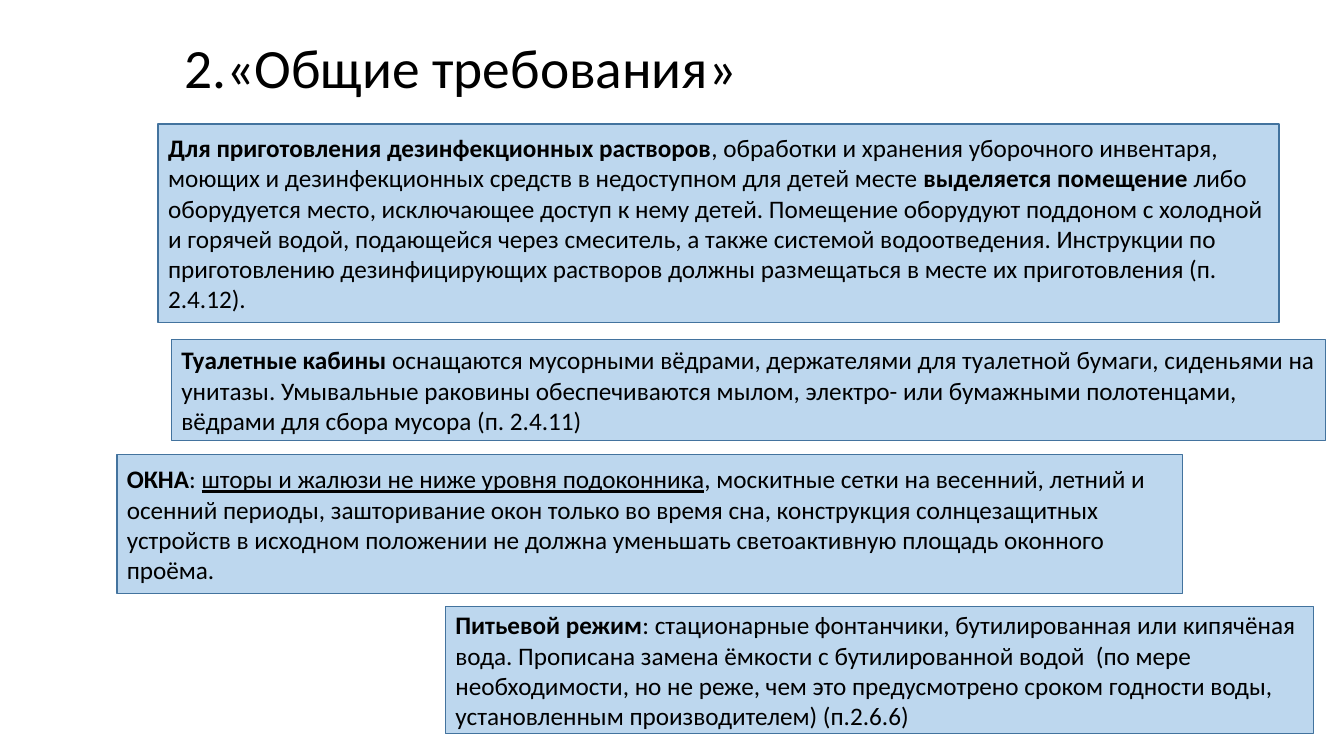
from typing import NamedTuple

from pptx import Presentation
from pptx.dml.color import RGBColor
from pptx.enum.shapes import MSO_SHAPE
from pptx.enum.text import MSO_ANCHOR, PP_ALIGN
from pptx.util import Pt

BLACK = RGBColor(0x00, 0x00, 0x00)
LIGHT_BLUE = RGBColor(0xBD, 0xD7, 0xEE)
DARK_BLUE = RGBColor(0x43, 0x73, 0x9E)
FONT = "Calibri"


class Span(NamedTuple):
    text: str
    bold: bool = False
    underline: bool = False


class Rule(NamedTuple):
    left: float
    top: float
    width: float
    height: float
    spans: list[Span]


RULES = [
    Rule(113, 88.6, 800.6, 141.8, [
        Span("Для приготовления дезинфекционных растворов", bold=True),
        Span(", обработки и хранения уборочного инвентаря, моющих и "
             "дезинфекционных средств в недоступном для детей месте "),
        Span("выделяется помещение ", bold=True),
        Span("либо оборудуется место, исключающее доступ к нему детей. "
             "Помещение оборудуют поддоном с холодной и горячей водой, "
             "подающейся через смеситель, а также системой водоотведения. "
             "Инструкции по приготовлению дезинфицирующих растворов должны "
             "размещаться в месте их приготовления (п. 2.4.12)."),
    ]),
    Rule(122.4, 242.6, 824.4, 72, [
        Span("Туалетные кабины", bold=True),
        Span(" оснащаются мусорными вёдрами, держателями для туалетной "
             "бумаги, сиденьями на унитазы. Умывальные раковины "
             "обеспечиваются мылом, электро- или бумажными полотенцами, "
             "вёдрами для сбора мусора (п. 2.4.11)"),
    ]),
    Rule(83.5, 324.7, 761, 99.4, [
        Span("ОКНА", bold=True),
        Span(": "),
        Span("шторы и жалюзи не ниже уровня подоконника", underline=True),
        Span(", москитные сетки на весенний, летний и осенний периоды, "
             "зашторивание окон только во время сна, конструкция "
             "солнцезащитных устройств в исходном положении не должна "
             "уменьшать светоактивную площадь оконного проёма."),
    ]),
    Rule(318.2, 433.4, 619.9, 90.7, [
        Span("Питьевой режим", bold=True),
        Span(": стационарные фонтанчики, бутилированная или кипячёная вода. "
             "Прописана замена ёмкости с бутилированной водой  (по мере "
             "необходимости, но не реже, чем это предусмотрено сроком "
             "годности воды, установленным производителем) (п.2.6.6)"),
    ]),
]


def write(tf, spans: list[Span], *, size: float, line_spacing: float = 1.0) -> None:
    """Fill a text frame with one left-aligned paragraph."""
    tf.word_wrap = True
    tf.vertical_anchor = MSO_ANCHOR.MIDDLE
    p = tf.paragraphs[0]
    p.alignment = PP_ALIGN.LEFT
    p.line_spacing = line_spacing
    for span in spans:
        r = p.add_run()
        r.text = span.text
        r.font.name = FONT
        r.font.size = Pt(size)
        r.font.bold = span.bold
        r.font.underline = span.underline
        r.font.color.rgb = BLACK


def draw_rule(s, rule: Rule) -> None:
    sp = s.shapes.add_shape(MSO_SHAPE.RECTANGLE, Pt(rule.left), Pt(rule.top),
                            Pt(rule.width), Pt(rule.height))
    sp.shadow.inherit = False
    sp.fill.solid()
    sp.fill.fore_color.rgb = LIGHT_BLUE
    sp.line.color.rgb = DARK_BLUE
    sp.line.width = Pt(1)
    write(sp.text_frame, rule.spans, size=18)


def main() -> None:
    prs = Presentation()
    prs.slide_width, prs.slide_height = Pt(960), Pt(540)
    s = prs.slides.add_slide(prs.slide_layouts[6])

    # Title
    title = s.shapes.add_textbox(Pt(124.6), Pt(23.8), Pt(789.1), Pt(52.6))
    write(title.text_frame, [Span("2.«Общие требования»")], size=39.6, line_spacing=0.9)

    # Requirement boxes
    for rule in RULES:
        draw_rule(s, rule)

    prs.save("out.pptx")


if __name__ == "__main__":
    main()
